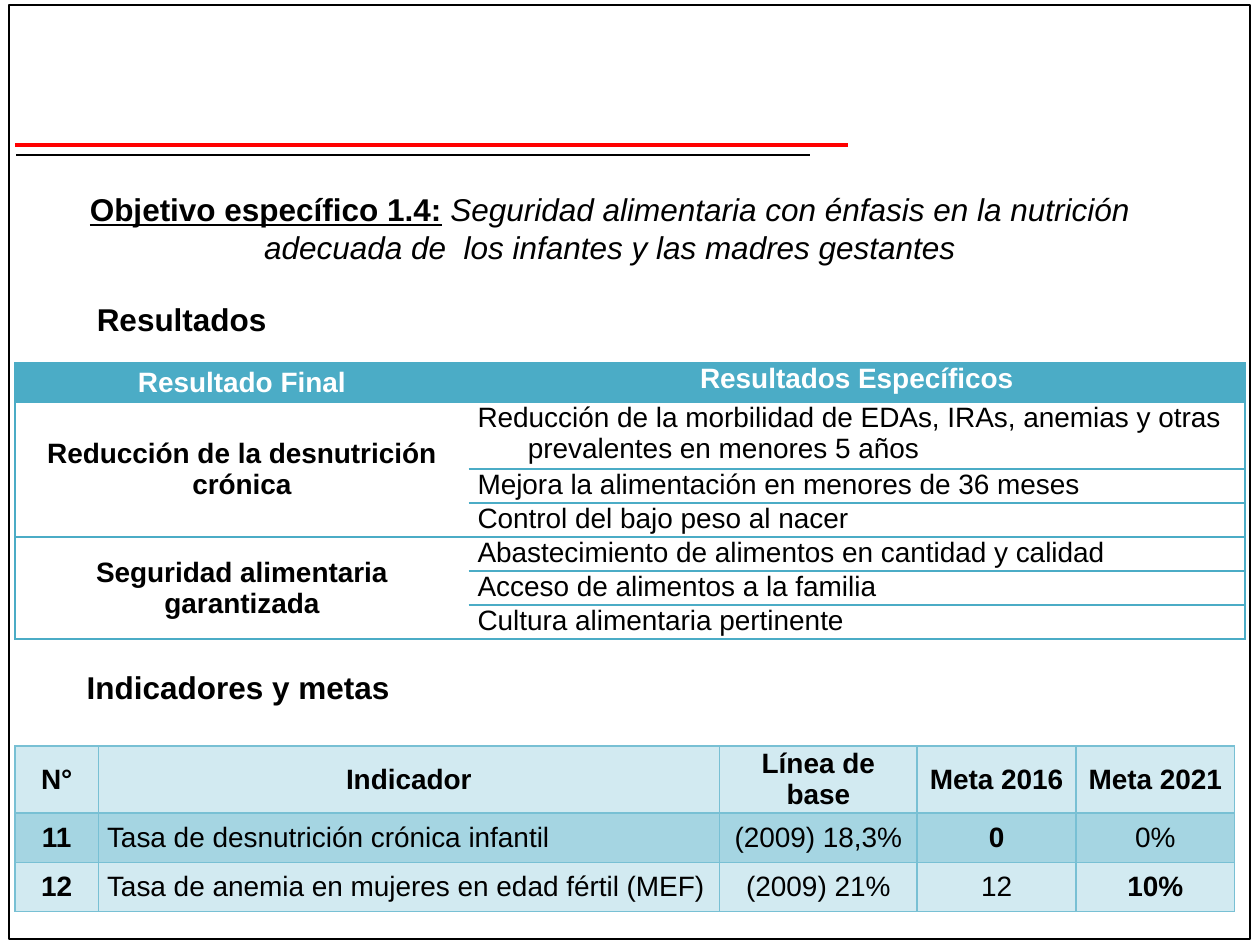
from dataclasses import dataclass

import pptx
import pptx.dml.color
import pptx.enum.shapes
import pptx.enum.text
import pptx.oxml
import pptx.oxml.ns
import pptx.util
from pptx.dml.color import RGBColor
from pptx.util import Inches

BLACK = RGBColor(0x00, 0x00, 0x00)
WHITE = RGBColor(0xFF, 0xFF, 0xFF)
RED = RGBColor(0xFF, 0x00, 0x00)
TEAL = RGBColor(0x4B, 0xAC, 0xC6)
SKY = RGBColor(0x78, 0xC0, 0xD4)
PALE = RGBColor(0xD2, 0xEA, 0xF1)
BAND = RGBColor(0xA5, 0xD5, 0xE2)
FONT = "Arial"
LEFT = pptx.enum.text.PP_ALIGN.LEFT
CENTER = pptx.enum.text.PP_ALIGN.CENTER
TOP = pptx.enum.text.MSO_ANCHOR.TOP
MIDDLE = pptx.enum.text.MSO_ANCHOR.MIDDLE


@dataclass
class Rule:
    start: float
    end: float
    y: float
    color: RGBColor
    width: float


@dataclass
class Result:
    final: str
    specifics: list[tuple[str, float]]  # wording and hanging indent


RULES = [
    Rule(0.12, 6.73, 1.15, RED, 2.25),
    Rule(0.13, 6.43, 1.23, BLACK, 1),
]
RESULTS = [
    Result("Reducción de la desnutrición crónica", [
        ("Reducción de la morbilidad de EDAs, IRAs, anemias y otras "
         "prevalentes en menores 5 años", 0.4),
        ("Mejora la alimentación en menores de 36 meses", 0.4),
        ("Control del bajo peso al nacer", 0),
    ]),
    Result("Seguridad alimentaria garantizada", [
        ("Abastecimiento de alimentos en cantidad y calidad", 0.39),
        ("Acceso de alimentos a la familia", 0),
        ("Cultura alimentaria pertinente", 0),
    ]),
]
INDICATORS = [
    ["N°", "Indicador", "Línea de base", "Meta 2016", "Meta 2021"],
    ["11", "Tasa de desnutrición crónica infantil", "(2009) 18,3%", "0", "0%"],
    ["12", "Tasa de anemia en mujeres en edad fértil (MEF)", "(2009) 21%",
     "12", "10%"],
]
BOLD_GOALS = {"0", "10%"}


def add_span(para, text: str, *, size: float = 18, color: RGBColor = BLACK,
             bold: bool = False, italic: bool = False,
             underline: bool = False) -> None:
    span = para.add_run()
    span.text = text
    span.font.name = FONT
    span.font.size = pptx.util.Pt(size)
    span.font.color.rgb = color
    span.font.bold = bold
    span.font.italic = italic
    span.font.underline = underline


def add_box(page, left: float, top: float, width: float, height: float, *,
            wrap: bool = True, align=LEFT):
    """Add a text box and return its first paragraph."""
    box = page.shapes.add_textbox(
        Inches(left), Inches(top), Inches(width), Inches(height))
    box.text_frame.word_wrap = wrap
    box.text_frame.auto_size = pptx.enum.text.MSO_AUTO_SIZE.SHAPE_TO_FIT_TEXT
    para = box.text_frame.paragraphs[0]
    para.alignment = align
    return para


def add_rule(page, rule: Rule) -> None:
    line = page.shapes.add_connector(
        pptx.enum.shapes.MSO_CONNECTOR.STRAIGHT, Inches(rule.start),
        Inches(rule.y), Inches(rule.end), Inches(rule.y))
    line.line.color.rgb = rule.color
    line.line.width = pptx.util.Pt(rule.width)
    properties = line._element.spPr
    properties.append(pptx.oxml.parse_xml(
        f'<a:effectLst {pptx.oxml.ns.nsdecls("a")}/>'))


def add_grid(page, left: float, top: float, columns: list[float],
             rows: list[float]):
    table = page.shapes.add_table(
        len(rows), len(columns), Inches(left), Inches(top),
        Inches(sum(columns)), Inches(sum(rows))).table
    table.first_row = table.horz_banding = False
    for column, width in zip(table.columns, columns):
        column.width = Inches(width)
    for row, height in zip(table.rows, rows):
        row.height = Inches(height)
    return table


def set_cell(cell, *, color: RGBColor, sides: str = "LRTB",
             fill: RGBColor | None = None, inset: float = 0.07,
             anchor=MIDDLE) -> None:
    """Give a cell its borders on the named sides, its fill and its margins."""
    properties = cell._tc.get_or_add_tcPr()
    for side in "LRTB":
        paint = (f'<a:solidFill><a:srgbClr val="{color}"/></a:solidFill>'
                 if side in sides else "<a:noFill/>")
        properties.append(pptx.oxml.parse_xml(
            f'<a:ln{side} {pptx.oxml.ns.nsdecls("a")} w="12700">'
            f"{paint}</a:ln{side}>"))
    if fill is None:
        cell.fill.background()
    else:
        cell.fill.solid()
        cell.fill.fore_color.rgb = fill
    cell.margin_left = cell.margin_right = Inches(inset)
    cell.margin_top = cell.margin_bottom = 0
    cell.vertical_anchor = anchor


def write_cell(cell, text: str, *, bold: bool = False, align=CENTER,
               color: RGBColor = BLACK, hanging: float = 0) -> None:
    para = cell.text_frame.paragraphs[0]
    para.alignment = align
    if hanging:
        properties = para._p.get_or_add_pPr()
        properties.set("marL", str(Inches(hanging)))
        properties.set("indent", str(-Inches(hanging)))
    add_span(para, text, size=16, color=color, bold=bold)


def add_results(page) -> None:
    table = add_grid(page, 0.12, 2.88, [3.6, 6.16], [0.31, 0.53] + [0.27] * 5)
    headings = [("Resultado Final", "LTB", MIDDLE),
                ("Resultados Específicos", "RTB", TOP)]
    for column, (text, sides, anchor) in enumerate(headings):
        cell = table.cell(0, column)
        set_cell(cell, color=TEAL, sides=sides, fill=TEAL, inset=0.06,
                 anchor=anchor)
        write_cell(cell, text, bold=True, color=WHITE)
    first = 1
    for result in RESULTS:
        last = first + len(result.specifics) - 1
        for row, (text, hanging) in enumerate(result.specifics, first):
            sides = "LTB" if row == first else "LB" if row == last else "L"
            set_cell(table.cell(row, 0), color=TEAL, sides=sides)
            cell = table.cell(row, 1)
            set_cell(cell, color=TEAL, sides="RTB", anchor=TOP)
            write_cell(cell, text, align=LEFT, hanging=hanging)
        table.cell(first, 0).merge(table.cell(last, 0))
        write_cell(table.cell(first, 0), result.final, bold=True)
        first = last + 1


def add_indicators(page) -> None:
    table = add_grid(page, 0.12, 5.92, [0.66, 4.93, 1.57, 1.26, 1.26],
                     [0.53, 0.39, 0.39])
    for row, texts in enumerate(INDICATORS):
        for column, text in enumerate(texts):
            cell = table.cell(row, column)
            set_cell(cell, color=SKY, fill=BAND if row % 2 else PALE)
            write_cell(cell, text,
                       bold=row == 0 or column == 0 or text in BOLD_GOALS,
                       align=LEFT if row and column == 1 else CENTER)


def main() -> None:
    deck = pptx.Presentation()
    deck.slide_width, deck.slide_height = Inches(10), Inches(7.5)
    page = deck.slides.add_slide(deck.slide_layouts[6])

    # Page frame and heading rules
    frame = page.shapes.add_shape(
        pptx.enum.shapes.MSO_SHAPE.RECTANGLE,
        Inches(0.07), Inches(0.04), Inches(9.85), Inches(7.41))
    frame.shadow.inherit = False
    frame.fill.background()
    frame.line.color.rgb = BLACK
    frame.line.width = pptx.util.Pt(1)
    for rule in RULES:
        add_rule(page, rule)

    # Objective
    para = add_box(page, 0.59, 1.46, 8.5, 0.71, align=CENTER)
    add_span(para, "Objetivo específico 1.4:", bold=True, underline=True)
    add_span(para, " ", bold=True)
    add_span(para, "Seguridad alimentaria con énfasis en la nutrición adecuada "
             "de  los infantes y las madres gestantes", italic=True)

    # Results
    add_span(add_box(page, 0.67, 2.33, 1.56, 0.4), "Resultados", bold=True)
    add_results(page)

    # Indicators and goals
    add_span(add_box(page, 0.59, 5.25, 2.63, 0.4, wrap=False),
             "Indicadores y metas", bold=True)
    add_indicators(page)
    deck.save("out.pptx")


if __name__ == "__main__":
    main()
